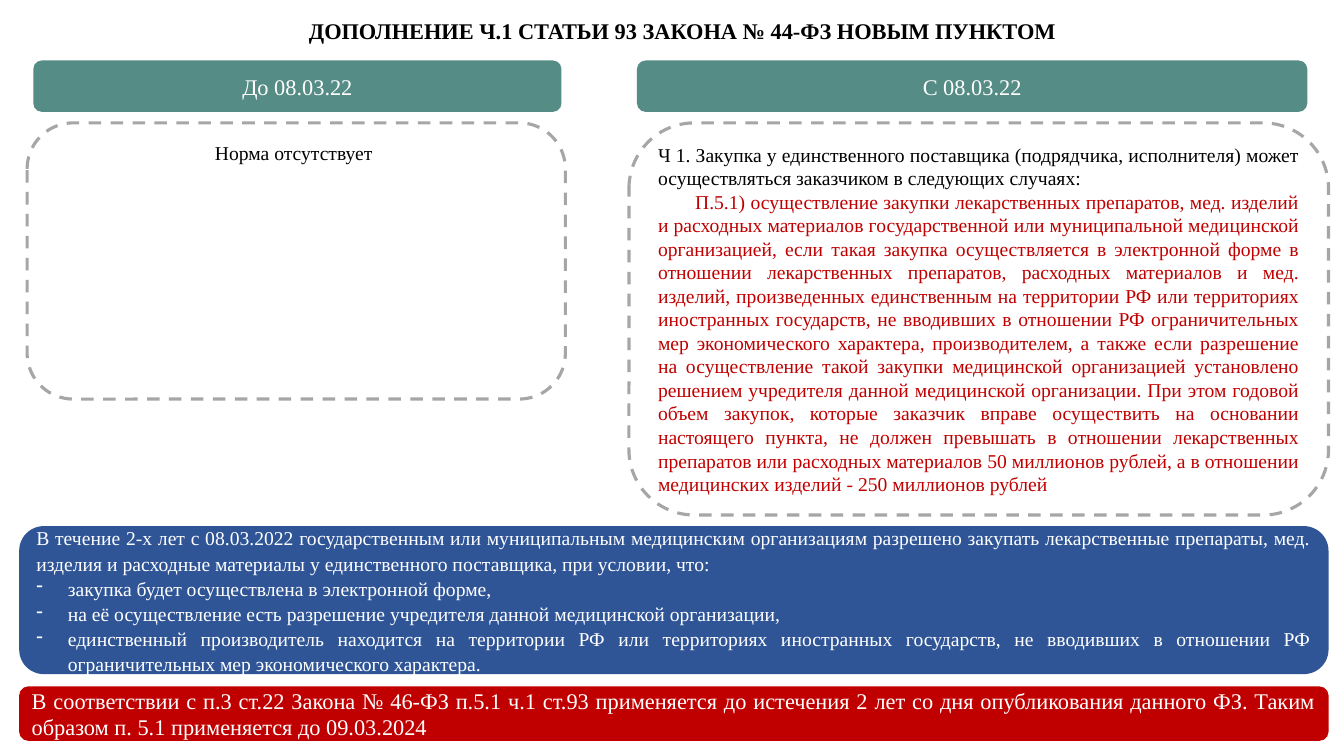
from pptx import Presentation
from pptx.dml.color import RGBColor
from pptx.enum.dml import MSO_LINE
from pptx.enum.shapes import MSO_SHAPE
from pptx.enum.text import MSO_ANCHOR as Anchor, PP_ALIGN as Align
from pptx.oxml.xmlchemy import OxmlElement
from pptx.util import Pt

FONT = "Times New Roman"
COLORS = {"black": "000000", "white": "FFFFFF", "gray": "A6A6A6",
          "teal": "568C86", "blue": "2F5597", "red": "C00000"}

# Content
TITLE = "ДОПОЛНЕНИЕ Ч.1 СТАТЬИ 93 ЗАКОНА № 44-ФЗ НОВЫМ ПУНКТОМ"
BEFORE, AFTER = "До 08.03.22", "С 08.03.22"
OLD_RULE = "Норма отсутствует "
NEW_RULE_INTRO = ("Ч 1. Закупка у единственного поставщика (подрядчика, исполнителя) может "
                  "осуществляться заказчиком в следующих случаях:")
NEW_RULE_SENTENCES = [
    "П.5.1) осуществление закупки лекарственных препаратов, мед. изделий и расходных "
    "материалов государственной или муниципальной медицинской организацией, если такая "
    "закупка осуществляется в электронной форме в отношении лекарственных препаратов, "
    "расходных материалов и мед. изделий, произведенных единственным на территории РФ или "
    "территориях иностранных государств, не вводивших в отношении РФ ограничительных мер "
    "экономического характера, производителем, а также если разрешение на осуществление "
    "такой закупки медицинской организацией установлено решением учредителя данной "
    "медицинской организации.",
    "При этом годовой объем закупок, которые заказчик вправе осуществить на основании "
    "настоящего пункта, не должен превышать в отношении лекарственных препаратов или "
    "расходных материалов 50 миллионов рублей, а в отношении медицинских изделий - "
    "250 миллионов рублей",
]
CONDITIONS = [
    "В течение 2-х лет с 08.03.2022 государственным или муниципальным медицинским "
    "организациям разрешено закупать лекарственные препараты, мед. изделия и расходные "
    "материалы у единственного поставщика, при условии, что:",
    "закупка будет осуществлена в электронной форме, ",
    "на её осуществление есть разрешение учредителя данной медицинской организации,",
    "единственный производитель находится на территории РФ или территориях иностранных "
    "государств, не вводивших в отношении РФ ограничительных мер экономического характера.",
]
DEADLINE = ("В соответствии с п.3 ст.22 Закона № 46-ФЗ п.5.1 ч.1 ст.93 применяется до истечения "
            "2 лет со дня опубликования данного ФЗ. Таким образом п. 5.1 применяется до 09.03.2024 ")

# Shared edges, in points
HEADER_TOP, HEADER_HEIGHT = 43.2, 36.7
PANEL_TOP = 87.8
BANNER_LEFT, BANNER_WIDTH = 13.7, 935.3


def color(name):
    return RGBColor.from_string(COLORS[name])


def format_paragraph(paragraph, size, text_color, align, bold=False):
    paragraph.alignment = align
    for run in paragraph.runs:
        run.font.name, run.font.size, run.font.bold = FONT, Pt(size), bold
        run.font.color.rgb = color(text_color)


def set_indent(paragraph, left, first, bullet=None):
    properties = paragraph._p.get_or_add_pPr()
    properties.set("marL", str(Pt(left)))
    properties.set("indent", str(Pt(first)))
    if bullet:
        mark = OxmlElement("a:buChar")
        mark.set("char", bullet)
        properties.append(mark)


def add_box(slide, box, lines, size, text_color, align, fill=None, anchor=Anchor.MIDDLE):
    """Add a rounded box: filled, or outlined with gray dashes when fill is None."""
    shape = slide.shapes.add_shape(MSO_SHAPE.ROUNDED_RECTANGLE, *map(Pt, box))
    shape.shadow.inherit = False
    if fill:
        shape.fill.solid()
        shape.fill.fore_color.rgb = color(fill)
        shape.line.fill.background()
    else:
        shape.fill.background()
        shape.line.color.rgb = color("gray")
        shape.line.width = Pt(2.25)
        shape.line.dash_style = MSO_LINE.DASH
    frame = shape.text_frame
    frame.word_wrap = True
    frame.vertical_anchor = anchor
    frame.text = "\n".join(lines)
    for paragraph in frame.paragraphs:
        format_paragraph(paragraph, size, text_color, align)
    return frame.paragraphs


def main():
    presentation = Presentation()
    presentation.slide_width, presentation.slide_height = Pt(960), Pt(540)
    slide = presentation.slides.add_slide(presentation.slide_layouts[5])

    # Title
    title = slide.shapes.title
    title.left, title.top, title.width, title.height = map(Pt, (26, 3.6, 923, 31.7))
    title.text_frame.text = TITLE
    title.text_frame.vertical_anchor = Anchor.BOTTOM
    heading = title.text_frame.paragraphs[0]
    heading.line_spacing = 0.9
    format_paragraph(heading, 16, "black", Align.CENTER, bold=True)

    # Panels with the old and the new rule
    add_box(slide, (19.4, PANEL_TOP, 384.5, 197.3), [OLD_RULE], 14, "black",
            Align.CENTER, anchor=Anchor.TOP)
    new_rule = [NEW_RULE_INTRO, " ".join(NEW_RULE_SENTENCES)]
    intro, clause = add_box(slide, (449.3, PANEL_TOP, 499.7, 280.1), new_rule, 14,
                            "black", Align.JUSTIFY)
    format_paragraph(clause, 14, "red", Align.JUSTIFY)
    set_indent(clause, 0, 26.5)

    # Column headers
    for left, width, label in ((23.8, 377.3, BEFORE), (455, 478.8, AFTER)):
        add_box(slide, (left, HEADER_TOP, width, HEADER_HEIGHT), [label], 16, "white",
                Align.CENTER, fill="teal")

    # Conditions banner
    conditions = add_box(slide, (BANNER_LEFT, 375.8, BANNER_WIDTH, 105.8), CONDITIONS, 14,
                         "white", Align.JUSTIFY, fill="blue")
    for paragraph in conditions:
        paragraph.line_spacing = 1.07
    for paragraph in conditions[1:]:
        set_indent(paragraph, 22.5, -22.5, bullet="-")

    # Deadline banner
    add_box(slide, (BANNER_LEFT, 490.3, BANNER_WIDTH, 38.9), [DEADLINE], 16, "white",
            Align.JUSTIFY, fill="red")

    presentation.save("out.pptx")


if __name__ == "__main__":
    main()
